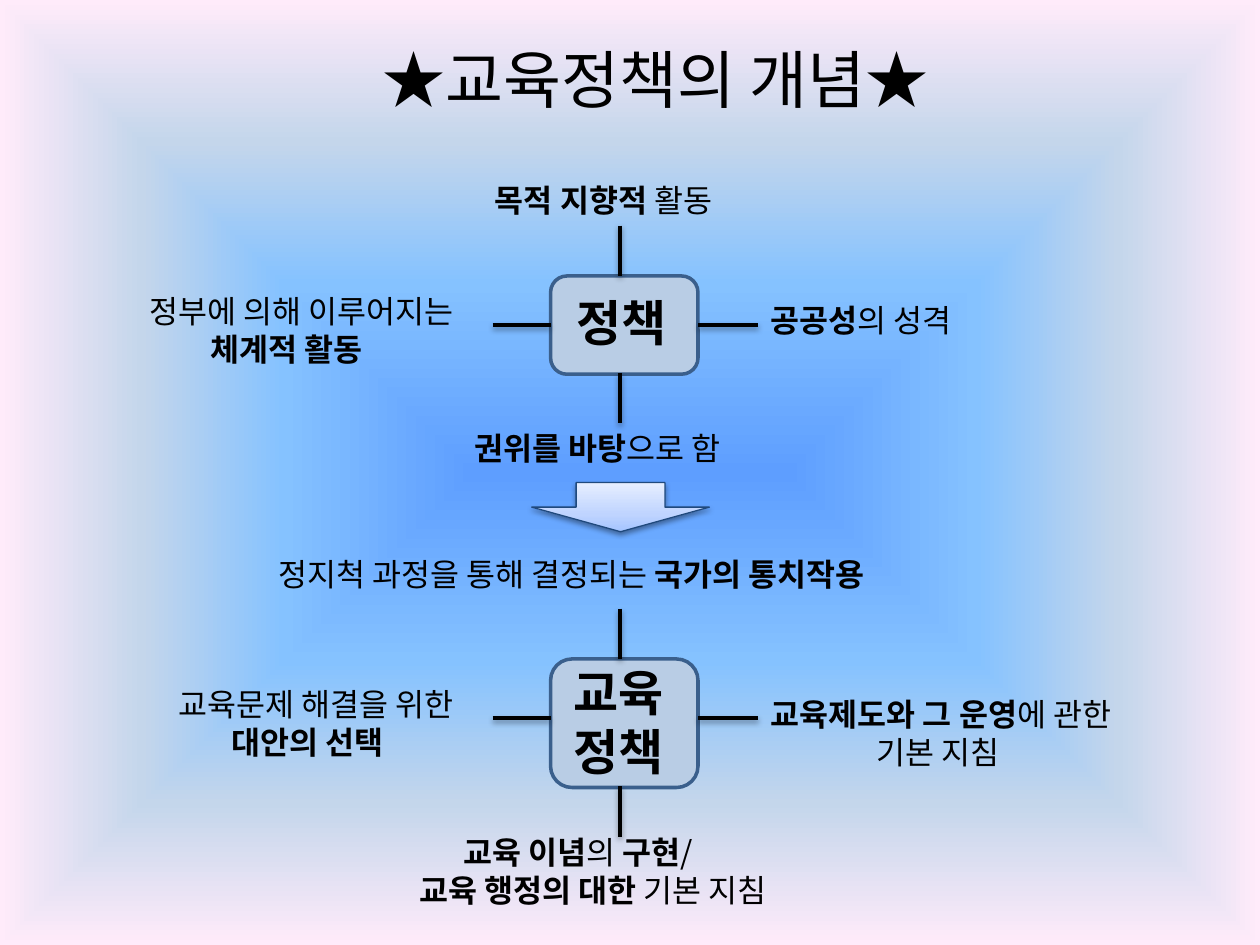
from lxml import etree
from pptx import Presentation
from pptx.dml.color import RGBColor
from pptx.enum.shapes import MSO_CONNECTOR, MSO_SHAPE
from pptx.enum.text import MSO_ANCHOR, PP_ALIGN
from pptx.oxml import parse_xml
from pptx.oxml.ns import nsdecls, qn
from pptx.util import Inches, Pt

STRAIGHT = MSO_CONNECTOR.STRAIGHT
ROUNDED, DOWN_ARROW = MSO_SHAPE.ROUNDED_RECTANGLE, MSO_SHAPE.DOWN_ARROW
CENTER, LEFT = PP_ALIGN.CENTER, PP_ALIGN.LEFT
MIDDLE, TOP = MSO_ANCHOR.MIDDLE, MSO_ANCHOR.TOP

FONT = "Noto Sans CJK KR"
BLACK, BOX_FILL, BOX_LINE, ARROW_LINE = "000000", "B9CDE5", "3A5F8C", "1F497D"
BACKGROUND_STOPS = [(0, "5E9EFF"), (40, "85C2FF"), (70, "C4D6EB"), (100, "FFEBFA")]
ARROW_STOPS = [(0, "A4C4FF"), (35, "BFD4FF"), (100, "E6EEFF")]
BOX_WIDTH = 1.17


def color(hex_value):
    return RGBColor.from_string(hex_value)


def gradient_xml(stops, direction):
    stop_xml = "".join(
        f'<a:gs pos="{percent * 1000}"><a:srgbClr val="{value}"/></a:gs>'
        for percent, value in stops)
    return (f'<a:gradFill {nsdecls("a")} rotWithShape="1">'
            f'<a:gsLst>{stop_xml}</a:gsLst>{direction}</a:gradFill>')


def add_shadow(shape):
    shape._element.spPr.append(parse_xml(
        f'<a:effectLst {nsdecls("a")}>'
        '<a:outerShdw blurRad="40000" dist="20000" dir="5400000" rotWithShape="0">'
        f'<a:srgbClr val="{BLACK}"><a:alpha val="38000"/></a:srgbClr>'
        '</a:outerShdw></a:effectLst>'))


def add_text(slide, box, lines, size=18, align=LEFT, anchor=TOP):
    """Each line is (indent in inches, [(text, bold), ...])."""
    frame = slide.shapes.add_textbox(*map(Inches, box)).text_frame
    frame.word_wrap = True
    frame.vertical_anchor = anchor
    for number, (indent, runs) in enumerate(lines):
        paragraph = frame.add_paragraph() if number else frame.paragraphs[0]
        paragraph.alignment = align
        if indent:
            paragraph._p.get_or_add_pPr().set("marL", str(Inches(indent)))
        for text, bold in runs:
            run = paragraph.add_run()
            run.text = text
            run.font.size, run.font.bold = Pt(size), bold
            run.font.color.rgb = color(BLACK)
            run.font.name = FONT
            east_asian = etree.SubElement(run._r.get_or_add_rPr(), qn("a:ea"))
            east_asian.set("typeface", FONT)


def add_spoke(slide, x1, y1, x2, y2):
    spoke = slide.shapes.add_connector(STRAIGHT, *map(Inches, (x1, y1, x2, y2)))
    spoke.line.color.rgb = color(BLACK)
    spoke.line.width = Pt(2)
    add_shadow(spoke)


def set_background(slide):
    center = ('<a:path path="shape">'
              '<a:fillToRect l="50000" t="50000" r="50000" b="50000"/></a:path>')
    background = parse_xml(
        f'<p:bg {nsdecls("p", "a")}><p:bgPr>'
        f'{gradient_xml(BACKGROUND_STOPS, center)}<a:effectLst/></p:bgPr></p:bg>')
    slide._element.cSld.insert(0, background)


def add_concept(slide, left, top, height, spoke_y, name, labels):
    """Central box, four spokes and the labels around them."""
    box = slide.shapes.add_shape(
        ROUNDED, *map(Inches, (left, top, BOX_WIDTH, height)))
    box.shadow.inherit = False
    box.fill.solid()
    box.fill.fore_color.rgb = color(BOX_FILL)
    box.line.color.rgb = color(BOX_LINE)
    box.line.width = Pt(2)

    # Spokes: up, down, left, right
    middle, right, bottom = left + 0.55, left + BOX_WIDTH, top + height
    side = top + spoke_y
    add_spoke(slide, middle, top - 0.4, middle, top)
    add_spoke(slide, middle, bottom - 0.01, middle, bottom + 0.39)
    add_spoke(slide, left - 0.46, side, left, side)
    add_spoke(slide, right, side, right + 0.48, side)

    # Name of the concept, then the label at the end of each spoke
    (dx, dy, width, name_height), words = name
    add_text(slide, (left + dx, top + dy, width, name_height),
             [(0, [(word, True)]) for word in words], size=28)
    for (dx, dy, width), lines in labels:
        label_height = 0.4 if len(lines) == 1 else 0.71
        add_text(slide, (left + dx, top + dy, width, label_height), lines)


def add_flow_arrow(slide, left, top, width, height):
    arrow = slide.shapes.add_shape(
        DOWN_ARROW, *map(Inches, (left, top, width, height)))
    arrow.line.color.rgb = color(ARROW_LINE)
    arrow.line.width = Pt(0.75)
    upward = '<a:lin ang="16200000" scaled="0"/>'
    arrow._element.spPr.find(qn("a:prstGeom")).addnext(
        parse_xml(gradient_xml(ARROW_STOPS, upward)))
    add_shadow(arrow)


POLICY_LABELS = [
    ((-0.54, -0.8, 2.15), [(0, [("목적 지향적 ", True), ("활동", False)])]),
    ((-3.28, 0.08, 2.97), [(0, [("정부에 의해 이루어지는", False)]),
                           (0.48, [("체계적 활동", True)])]),
    ((1.65, 0.15, 2.97), [(0, [("공공성", True), ("의 성격", False)])]),
    ((-0.7, 1.17, 2.97), [(0, [("권위를 바탕", True), ("으로 함", False)])]),
]
EDUCATION_LABELS = [
    ((-2.26, -0.87, 5.45), [(0, [("정지척 과정을 통해 결정되는 ", False),
                                 ("국가의 통치작용", True)])]),
    ((-3.05, 0.16, 2.74), [(0, [("교육문제 해결을 위한", False)]),
                           (0.42, [("대안의 선택", True)])]),
    ((1.65, 0.24, 3.25), [(0, [("교육제도와 그 운영", True), ("에 관한", False)]),
                          (0.84, [("기본 지침", False)])]),
    ((-1.14, 1.33, 3.34), [(0.35, [("교육 이념", True), ("의", False),
                                   (" 구현", True), ("/", False)]),
                           (0, [("교육 행정의 대한", True), (" 기본 지침", False)])]),
]


def main():
    presentation = Presentation()
    presentation.slide_width, presentation.slide_height = Inches(10), Inches(7.5)
    slide = presentation.slides.add_slide(presentation.slide_layouts[6])
    set_background(slide)
    add_text(slide, (0.7, 0, 9, 1.25), [(0, [("★교육정책의 개념★", False)])],
             size=36, align=CENTER, anchor=MIDDLE)
    add_concept(slide, 4.37, 2.19, 0.78, 0.39,
                ((0.11, 0.08, 0.99, 0.57), ["정책"]), POLICY_LABELS)
    add_flow_arrow(slide, 4.22, 3.83, 1.41, 0.39)
    add_concept(slide, 4.37, 5.23, 1.02, 0.47,
                ((0.08, -0.02, 1.13, 1.04), ["교육", "정책"]), EDUCATION_LABELS)
    presentation.save("out.pptx")


if __name__ == "__main__":
    main()
